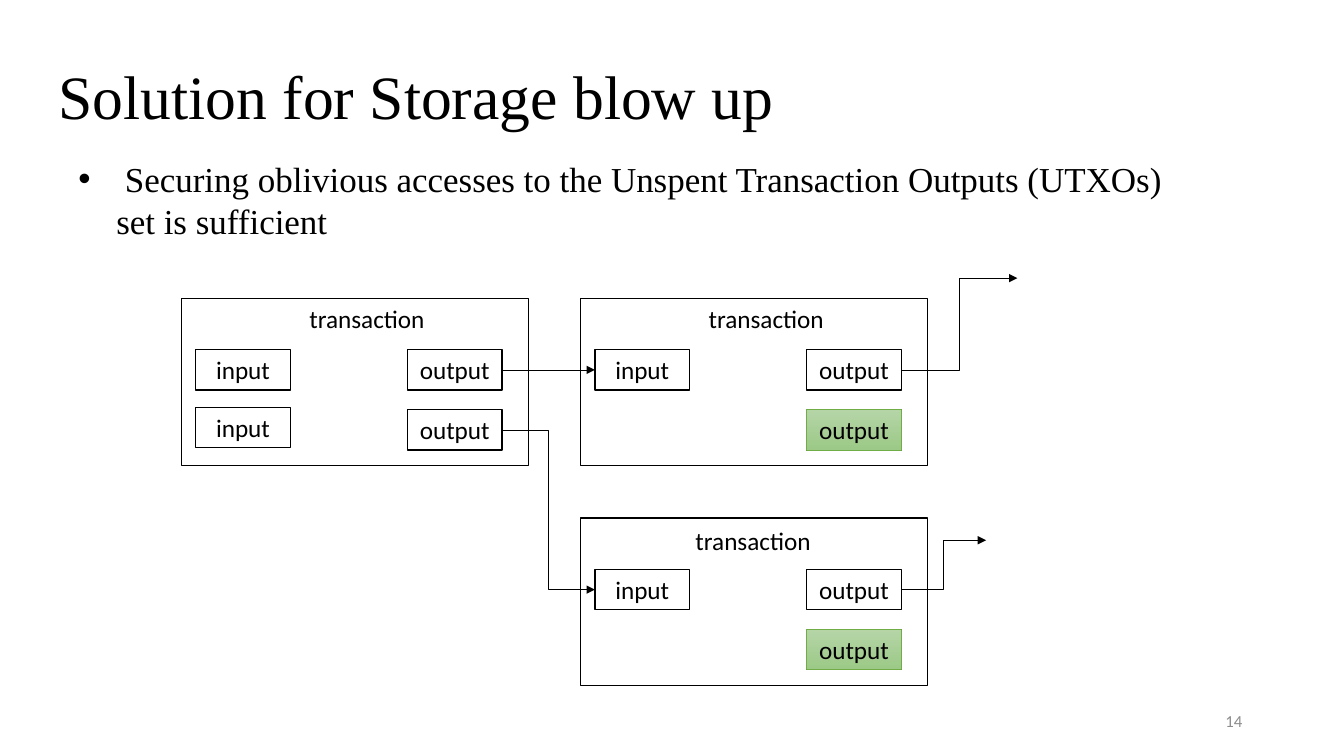
from dataclasses import dataclass
from typing import Optional

from lxml.etree import SubElement
from pptx import Presentation
from pptx.dml.color import RGBColor
from pptx.enum.shapes import MSO_CONNECTOR, MSO_SHAPE
from pptx.enum.text import MSO_ANCHOR, MSO_AUTO_SIZE, PP_ALIGN
from pptx.oxml import parse_xml
from pptx.oxml.ns import nsdecls, qn
from pptx.shapes.autoshape import Shape
from pptx.shapes.connector import Connector
from pptx.slide import Slide
from pptx.text.text import TextFrame
from pptx.util import Inches, Length, Pt


@dataclass(frozen=True)
class Theme:
    ink: RGBColor = RGBColor(0, 0, 0)
    paper: RGBColor = RGBColor(255, 255, 255)
    muted: RGBColor = RGBColor(0x8C, 0x8C, 0x8C)
    unspent_top: RGBColor = RGBColor(0xB5, 0xD5, 0xA7)
    unspent_bottom: RGBColor = RGBColor(0x9C, 0xC9, 0x87)
    unspent_edge: RGBColor = RGBColor(0x70, 0xAD, 0x47)
    serif: str = "Times New Roman"
    sans: str = "Calibri"
    title_size: float = 44
    body_size: float = 25
    label_size: float = 18
    number_size: float = 12
    box_line: float = 1
    thin_line: float = 0.5


@dataclass(frozen=True)
class Area:
    column: float
    row: float
    columns: float
    rows: float

    def lengths(self) -> tuple[Length, Length, Length, Length]:
        return (grid(self.column), grid(self.row), grid(self.columns), grid(self.rows))


@dataclass(frozen=True)
class Transaction:
    column: float
    row: float
    inputs: int
    unspent: bool = False
    label_column: float = 11.7
    label_row: float = 0


@dataclass(frozen=True)
class Ports:
    inputs: list[Shape]
    outputs: list[Shape]


THEME = Theme()
CELL = 0.1
CARD_COLUMNS, CARD_ROWS = 34.4, 16.6
PORT_COLUMNS, PORT_ROWS = 9.4, 4
INPUT_COLUMN, OUTPUT_COLUMN = 1.4, 22.4
FIRST_PORT_ROW, INPUT_STEP, OUTPUT_STEP = 5.1, 5.7, 5.95
LEFT_SITE, RIGHT_SITE = 1, 3

TRANSACTIONS = (
    Transaction(18, 29.6, inputs=2),
    Transaction(57.6, 29.6, inputs=1, unspent=True),
    Transaction(57.6, 51.4, inputs=1, unspent=True, label_column=10.4, label_row=0.2),
)


def grid(cells: float) -> Length:
    return Inches(cells * CELL)


def write(frame: TextFrame, text: str, size: float, font: str = THEME.sans,
          color: RGBColor = THEME.ink, align: PP_ALIGN = PP_ALIGN.LEFT) -> None:
    frame.text = text
    paragraph = frame.paragraphs[0]
    paragraph.alignment = align
    paragraph.font.size = Pt(size)
    paragraph.font.name = font
    paragraph.font.color.rgb = color


def add_text(slide: Slide, area: Area, grow: bool = True, wrap: bool = True) -> TextFrame:
    frame = slide.shapes.add_textbox(*area.lengths()).text_frame
    frame.word_wrap = wrap
    frame.auto_size = MSO_AUTO_SIZE.SHAPE_TO_FIT_TEXT if grow else MSO_AUTO_SIZE.NONE
    return frame


def add_box(slide: Slide, area: Area, text: str = "", unspent: bool = False) -> Shape:
    box = slide.shapes.add_shape(MSO_SHAPE.RECTANGLE, *area.lengths())
    box.shadow.inherit = False
    if unspent:
        box.fill.gradient()
        box.fill.gradient_angle = 270
        top, bottom = box.fill.gradient_stops
        top.color.rgb, bottom.color.rgb = THEME.unspent_top, THEME.unspent_bottom
    else:
        box.fill.solid()
        box.fill.fore_color.rgb = THEME.paper
    box.line.color.rgb = THEME.unspent_edge if unspent else THEME.ink
    box.line.width = Pt(THEME.thin_line if unspent else THEME.box_line)
    if text:
        box.text_frame.vertical_anchor = MSO_ANCHOR.MIDDLE
        write(box.text_frame, text, THEME.label_size, align=PP_ALIGN.CENTER)
    return box


def add_transaction(slide: Slide, card: Transaction) -> Ports:
    def port(column: float, row: float) -> Area:
        return Area(card.column + column, card.row + row, PORT_COLUMNS, PORT_ROWS)

    add_box(slide, Area(card.column, card.row, CARD_COLUMNS, CARD_ROWS))
    label = Area(card.column + card.label_column, card.row + card.label_row, 13.6, 4)
    write(add_text(slide, label, wrap=False), "transaction", THEME.label_size)
    inputs = [add_box(slide, port(INPUT_COLUMN, FIRST_PORT_ROW + index * INPUT_STEP), "input")
              for index in range(card.inputs)]
    first = add_box(slide, port(OUTPUT_COLUMN, FIRST_PORT_ROW), "output")
    last_area = port(OUTPUT_COLUMN, FIRST_PORT_ROW + OUTPUT_STEP)
    if card.unspent:
        add_box(slide, last_area)
    last = add_box(slide, last_area, "output", card.unspent)
    return Ports(inputs, [first, last])


def add_arrow(slide: Slide, output: Shape, target: Optional[Shape] = None,
              column: float = 0, row: float = 0, elbow: bool = True) -> Connector:
    kind = MSO_CONNECTOR.ELBOW if elbow else MSO_CONNECTOR.STRAIGHT
    start = (output.left + output.width, output.top + output.height // 2)
    end = (target.left, target.top + target.height // 2) if target else (grid(column), grid(row))
    arrow = slide.shapes.add_connector(kind, *start, *end)
    arrow.begin_connect(output, RIGHT_SITE)
    if target:
        arrow.end_connect(target, LEFT_SITE)
    arrow.line.color.rgb = THEME.ink
    arrow.line.width = Pt(THEME.thin_line)
    SubElement(arrow.line._get_or_add_ln(), qn("a:tailEnd"), type="triangle")
    SubElement(arrow._element.spPr, qn("a:effectLst"))
    return arrow


def add_title(slide: Slide) -> None:
    title = slide.shapes.title
    title.left, title.top, title.width, title.height = Area(4.8, 2.6, 115, 14.5).lengths()
    title.text_frame.auto_size = MSO_AUTO_SIZE.NONE
    title.text_frame.vertical_anchor = MSO_ANCHOR.MIDDLE
    write(title.text_frame, "Solution for Storage blow up", THEME.title_size, THEME.serif)
    title.text_frame.paragraphs[0].line_spacing = 0.9


def add_claim(slide: Slide) -> None:
    claim = add_text(slide, Area(6.8, 15.1, 109.7, 9.4))
    write(claim, " Securing oblivious accesses to the Unspent Transaction Outputs (UTXOs) "
          "set is sufficient", THEME.body_size, THEME.serif)
    properties = claim.paragraphs[0]._p.get_or_add_pPr()
    indent = grid(3.75)
    properties.set("marL", str(indent))
    properties.set("indent", str(-indent))
    properties.insert(0, parse_xml(f'<a:buChar {nsdecls("a")} char="•"/>'))
    properties.insert(0, parse_xml(f'<a:buFont {nsdecls("a")} typeface="Arial"/>'))


def add_page_number(slide: Slide) -> None:
    number = add_text(slide, Area(94.2, 69.5, 30, 4), grow=False)
    number.vertical_anchor = MSO_ANCHOR.MIDDLE
    write(number, "14", THEME.number_size, color=THEME.muted, align=PP_ALIGN.RIGHT)


def main() -> None:
    deck = Presentation()
    deck.slide_width, deck.slide_height = Inches(13.33), Inches(7.5)
    slide = deck.slides.add_slide(deck.slide_layouts[5])
    add_title(slide)
    add_claim(slide)
    funding, upper, lower = [add_transaction(slide, card) for card in TRANSACTIONS]
    add_arrow(slide, funding.outputs[0], upper.inputs[0], elbow=False)
    add_arrow(slide, funding.outputs[1], lower.inputs[0])
    add_arrow(slide, upper.outputs[0], column=100.9, row=27.6)
    add_arrow(slide, lower.outputs[0], column=97.8, row=53.6)
    add_page_number(slide)
    deck.save("out.pptx")


if __name__ == "__main__":
    main()
